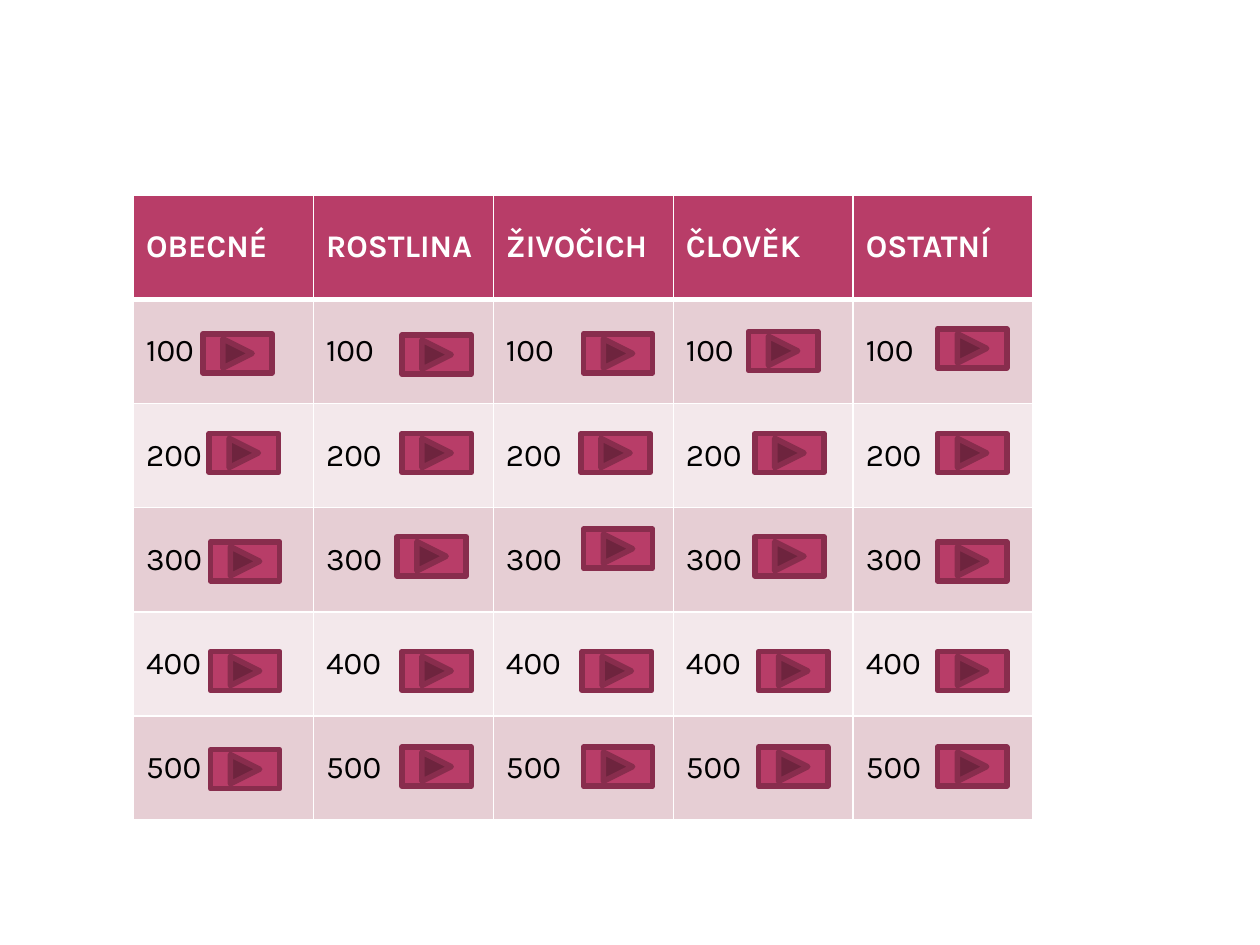
from lxml import etree
from pptx import Presentation
from pptx.dml.color import RGBColor
from pptx.enum.shapes import MSO_SHAPE
from pptx.enum.text import MSO_ANCHOR
from pptx.oxml.ns import qn
from pptx.util import Inches, Pt

FORWARD_BUTTON = MSO_SHAPE.ACTION_BUTTON_FORWARD_OR_NEXT
MIDDLE = MSO_ANCHOR.MIDDLE

POINTS = [100, 200, 300, 400, 500]
# Each category with the left and top of its buttons, one per point value
CATEGORIES = {
    "OBECNÉ": [(1.61, 2.65), (1.66, 3.44), (1.67, 4.3), (1.67, 5.17), (1.67, 5.95)],
    "ROSTLINA": [(3.19, 2.66), (3.19, 3.44), (3.15, 4.26), (3.19, 5.17), (3.19, 5.93)],
    "ŽIVOČICH": [(4.63, 2.65), (4.61, 3.44), (4.63, 4.2), (4.62, 5.17), (4.63, 5.93)],
    "ČLOVĚK": [(5.94, 2.63), (5.99, 3.44), (5.99, 4.26), (6.02, 5.17), (6.02, 5.93)],
    "OSTATNÍ": [(7.44, 2.61), (7.44, 3.44), (7.44, 4.3), (7.44, 5.17), (7.44, 5.93)],
}

THEME = {
    "accent": RGBColor.from_string("B83D68"),
    "button_line": RGBColor.from_string("882D4D"),
    "bands": [RGBColor.from_string("E6CED4"), RGBColor.from_string("F3E8EB")],
    "rule": "FFFFFF",
    "rule_width": 1,
    "header_rule_width": 3,
    "button_line_width": 3.15,
    "header_font": {"name": "Karla", "size": Pt(18), "bold": True},
    "body_font": {"name": "Karla", "size": Pt(18), "bold": False},
    "header_text": RGBColor.from_string("FFFFFF"),
    "body_text": RGBColor.from_string("000000"),
}

BOARD = (Inches(1.06), Inches(1.55), Inches(7.14), Inches(4.96))
BUTTON_SIZE = (Inches(0.55), Inches(0.31))


def add_rules(cell, widths):
    """Draw cell borders; widths maps a side (L, R, T, B) to points."""
    properties = cell._tc.get_or_add_tcPr()
    for side, width in widths.items():
        rule = etree.SubElement(properties, qn(f"a:ln{side}"), w=str(Pt(width)))
        fill = etree.SubElement(rule, qn("a:solidFill"))
        etree.SubElement(fill, qn("a:srgbClr"), val=THEME["rule"])


def fill_cell(cell, text, row):
    is_header = row == 0
    widths = dict.fromkeys("LRTB", THEME["rule_width"])
    if is_header:
        widths["B"] = THEME["header_rule_width"]
    elif row == 1:
        widths["T"] = THEME["header_rule_width"]
    add_rules(cell, widths)
    cell.fill.solid()
    cell.fill.fore_color.rgb = THEME["accent"] if is_header else THEME["bands"][(row - 1) % 2]
    cell.vertical_anchor = MIDDLE
    cell.text = str(text)
    font = cell.text_frame.paragraphs[0].runs[0].font
    for attribute, value in THEME["header_font" if is_header else "body_font"].items():
        setattr(font, attribute, value)
    font.color.rgb = THEME["header_text" if is_header else "body_text"]


def add_board(slide):
    rows = [list(CATEGORIES)] + [[value] * len(CATEGORIES) for value in POINTS]
    board = slide.shapes.add_table(len(rows), len(CATEGORIES), *BOARD).table
    for column in board.columns:
        column.width = BOARD[2] // len(CATEGORIES)
    for r, texts in enumerate(rows):
        board.rows[r].height = BOARD[3] // len(rows)
        for c, text in enumerate(texts):
            fill_cell(board.cell(r, c), text, r)


def add_button(slide, left, top):
    button = slide.shapes.add_shape(FORWARD_BUTTON, Inches(left), Inches(top), *BUTTON_SIZE)
    button.shadow.inherit = False
    button.fill.solid()
    button.fill.fore_color.rgb = THEME["accent"]
    button.line.color.rgb = THEME["button_line"]
    button.line.width = Pt(THEME["button_line_width"])


def main():
    deck = Presentation()
    deck.slide_width, deck.slide_height = Inches(10), Inches(7.5)
    slide = deck.slides.add_slide(deck.slide_layouts[6])
    add_board(slide)
    for positions in CATEGORIES.values():
        for left, top in positions:
            add_button(slide, left, top)
    deck.save("out.pptx")


if __name__ == "__main__":
    main()
